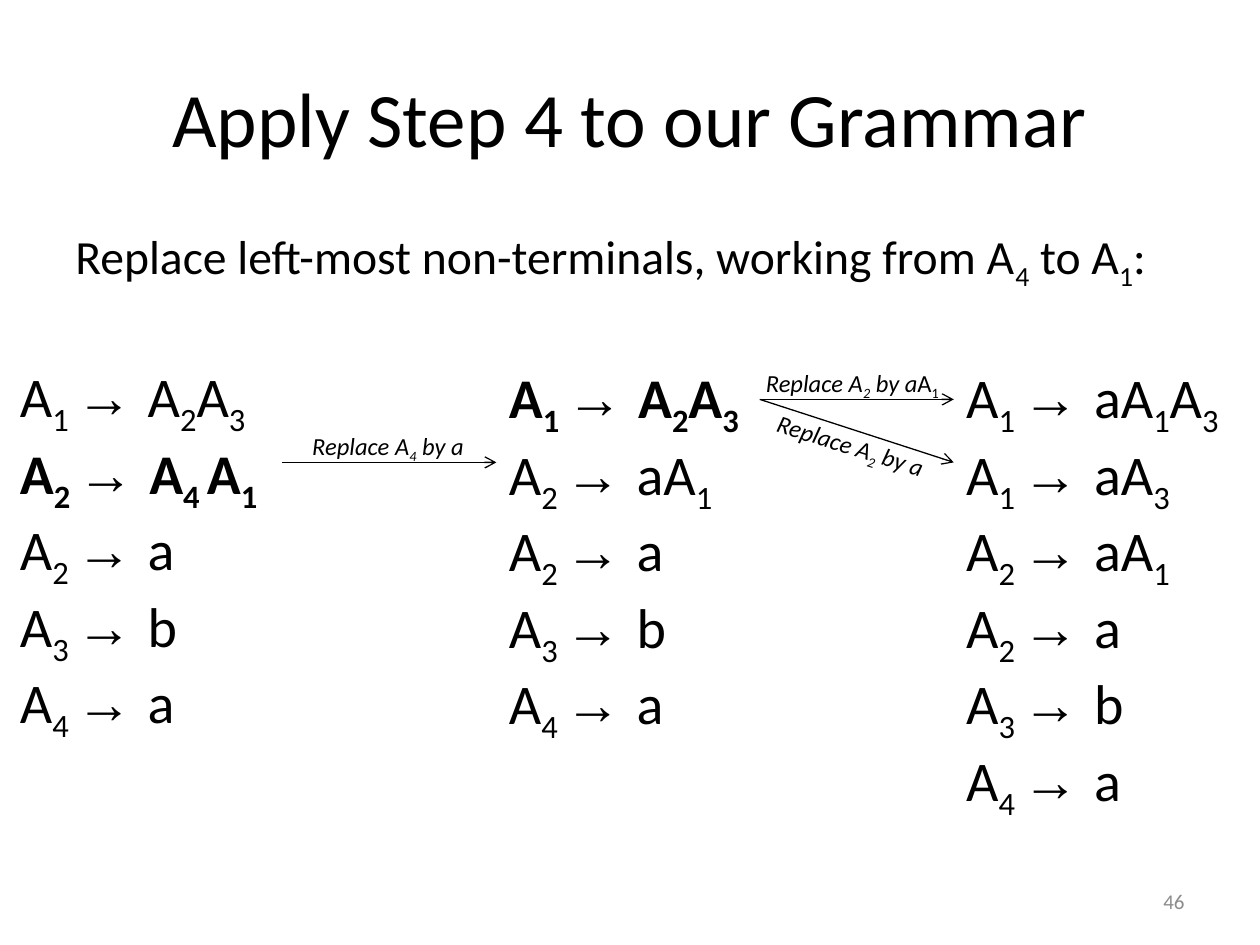
from dataclasses import dataclass

from lxml.etree import SubElement
from pptx import Presentation
from pptx.dml.color import RGBColor
from pptx.enum.shapes import MSO_CONNECTOR
from pptx.enum.text import MSO_ANCHOR, MSO_AUTO_SIZE, PP_ALIGN
from pptx.oxml.ns import qn
from pptx.util import Inches, Pt


@dataclass
class Rule:
    """One production A_index → right side, bold when it is rewritten next."""
    index: int
    right: str
    bold: bool = False


@dataclass
class Grammar:
    left: float
    top: float
    width: float
    height: float
    rules: list[Rule]


@dataclass
class Step:
    """An arrow between two grammars and the label that goes with it."""
    start: tuple[float, float]
    end: tuple[float, float]
    label: str
    box: tuple[float, float, float, float]
    rotation: float = 0


TAIL = [Rule(2, "a"), Rule(3, "b"), Rule(4, "a")]
GRAMMARS = [
    Grammar(0.06, 2.82, 2.22, 2.79,
            [Rule(1, "A{2}A{3}"), Rule(2, "A{4 }A{1}", bold=True), *TAIL]),
    Grammar(3.94, 2.83, 2.13, 2.79,
            [Rule(1, "A{2}A{3}", bold=True), Rule(2, "aA{1}"), *TAIL]),
    Grammar(7.57, 2.83, 2.31, 3.33,
            [Rule(1, "aA{1}A{3}"), Rule(1, "aA{3}"), Rule(2, "aA{1}"), *TAIL]),
]
STEPS = [
    Step((2.24, 3.67), (3.94, 3.67), "/Replace A{4} by a", (2.38, 3.37, 1.43, 0.34)),
    Step((6.03, 3.17), (7.57, 3.17), "/Replace A{2} by a/A{1}", (5.98, 2.87, 1.65, 0.34)),
    Step((6.03, 3.17), (7.57, 3.67), "/Replace A{2} by a", (6.05, 3.37, 1.42, 0.34), 17.4),
]


def rgb(value: str) -> RGBColor:
    return RGBColor.from_string(value)


def split_markup(text: str) -> list[tuple[str, bool, bool, bool]]:
    """Split into (text, subscript, arial, italic): {subscript} [arial] /italic/."""
    parts, chunk = [], ""
    sub = arial = italic = False
    for ch in text:
        if ch not in "{}[]/":
            chunk += ch
            continue
        if chunk:
            parts.append((chunk, sub, arial, italic))
            chunk = ""
        if ch in "{}":
            sub = ch == "{"
        elif ch in "[]":
            arial = ch == "["
        else:
            italic = not italic
    if chunk:
        parts.append((chunk, sub, arial, italic))
    return parts


def add_text(s, box, lines, *, size, color="000000", bold=(), align=PP_ALIGN.LEFT,
             anchor=MSO_ANCHOR.TOP, wrap=True, before=0, rotation=0):
    """Write marked-up lines; bold holds the numbers of the bold lines."""
    sp = s.shapes.add_textbox(*map(Inches, box))
    sp.rotation = rotation
    tf = sp.text_frame
    tf.word_wrap = wrap
    tf.auto_size = MSO_AUTO_SIZE.NONE if wrap else MSO_AUTO_SIZE.SHAPE_TO_FIT_TEXT
    tf.vertical_anchor = anchor
    for i, line in enumerate(lines):
        p = tf.add_paragraph() if i else tf.paragraphs[0]
        p.alignment = align
        p.space_before = Pt(before)
        for text, sub, arial, italic in split_markup(line):
            r = p.add_run()
            r.text = text
            r.font.name = "Arial" if arial else "Calibri"
            r.font.size = Pt(size)
            r.font.bold = i in bold
            r.font.italic = italic
            r.font.color.rgb = rgb(color)
            if sub:
                r._r.get_or_add_rPr().set("baseline", "-25000")
    return sp


def add_grammar(s, g: Grammar) -> None:
    lines = [f"A{{{rule.index} }}[→ ]{rule.right}" for rule in g.rules]
    bold = [i for i, rule in enumerate(g.rules) if rule.bold]
    add_text(s, (g.left, g.top, g.width, g.height), lines, size=32, bold=bold, wrap=False)


def add_step(s, step: Step) -> None:
    cx = s.shapes.add_connector(MSO_CONNECTOR.STRAIGHT,
                                *map(Inches, step.start + step.end))
    cx.line.width = Pt(0.75)
    cx.line.color.rgb = rgb("000000")
    SubElement(cx.line._get_or_add_ln(), qn("a:tailEnd"), type="arrow")
    SubElement(cx._element.spPr, qn("a:effectLst"))
    add_text(s, step.box, [step.label], size=14, wrap=False, rotation=step.rotation)


def main() -> None:
    prs = Presentation()
    prs.slide_width, prs.slide_height = Inches(10), Inches(7.5)
    s = prs.slides.add_slide(prs.slide_layouts[6])

    # Title, instruction and slide number
    add_text(s, (0.5, 0.3, 9, 1.25), ["Apply Step 4 to our Grammar"], size=44,
             align=PP_ALIGN.CENTER, anchor=MSO_ANCHOR.MIDDLE)
    add_text(s, (0.5, 1.75, 9, 0.81),
             ["Replace left-most non-terminals, working from A{4} to A{1}:"],
             size=27.2, before=5.4)
    add_text(s, (7.17, 6.95, 2.33, 0.4), ["46"], size=12, color="8C8C8C",
             align=PP_ALIGN.RIGHT, anchor=MSO_ANCHOR.MIDDLE)

    # Grammars from left to right, then the replacements between them
    for grammar in GRAMMARS:
        add_grammar(s, grammar)
    for step in STEPS:
        add_step(s, step)

    prs.save("out.pptx")


if __name__ == "__main__":
    main()
